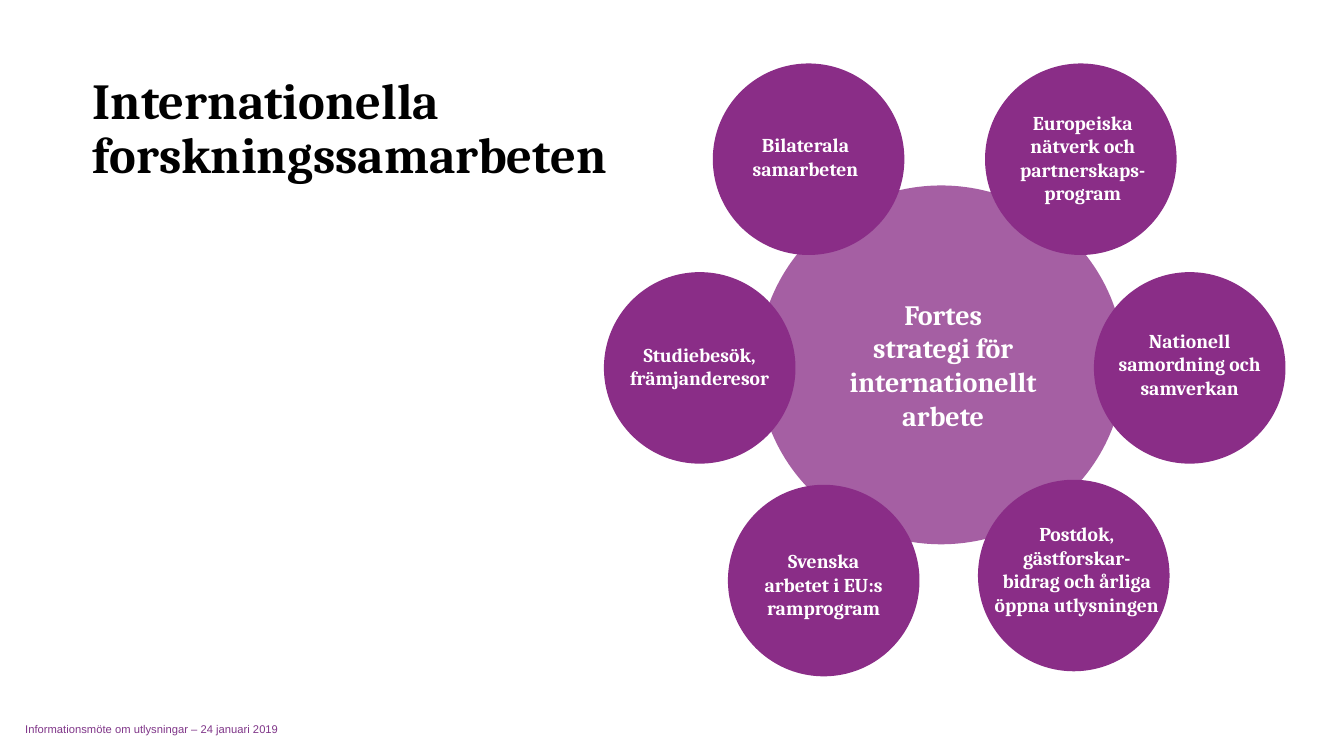
from lxml import etree
from pptx import Presentation
from pptx import util as u
from pptx.dml.color import RGBColor
from pptx.enum import shapes, text
from pptx.oxml import ns

PX = 9144
PURPLE = "8A2D87"
CIRCLE = 190
INSET = 10
SIDES = ("margin_left", "margin_top", "margin_right", "margin_bottom")

HUB_LABEL = "Fortes\nstrategi för\ninternationellt\narbete"
SATELLITES = [
    ((977, 63), (987, 105, 174, 104), "Europeiska nätverk och partnerskaps-program"),
    ((1085, 270), (1085, 321, 190, 81), "Nationell samordning och samverkan"),
    ((970, 476), (974, 513, 188, 128),
     "Postdok, gästforskar-\nbidrag och årliga öppna utlysningen"),
    ((722, 481), (722, 540, 190, 81), "Svenska\narbetet i EU:s ramprogram"),
    ((599, 270), (599, 335, 190, 57), "Studiebesök, främjanderesor"),
    ((707, 63), (707, 127, 184, 57), "Bilaterala samarbeten"),
]


def px(*lengths):
    return [u.Emu(length * PX) for length in lengths]


def color(value):
    return RGBColor.from_string(value)


def apply(target, values):
    for name, value in values.items():
        setattr(target, name, value)


def write(shape, content, size, fill, font="Cambria", bold=True, frame=None, paragraph=None):
    apply(shape.text_frame, {"word_wrap": True, **(frame or {})})
    line = shape.text_frame.paragraphs[0]
    line.text = content
    apply(line, paragraph or {})
    apply(line.font, {"name": font, "size": u.Pt(size), "bold": bold})
    line.font.color.rgb = color(fill)


def add_circle(slide, box, alpha=None):
    circle = slide.shapes.add_shape(shapes.MSO_SHAPE.OVAL, *px(*box))
    circle.shadow.inherit = False
    circle.fill.solid()
    circle.fill.fore_color.rgb = color(PURPLE)
    circle.line.fill.background()
    if alpha:
        solid = circle.fill._xPr.find(ns.qn("a:solidFill"))
        etree.SubElement(solid[0], ns.qn("a:alpha"), val=str(alpha * 1000))


def add_label(slide, box, content, size):
    label = slide.shapes.add_textbox(*px(*box))
    write(label, content, size, "FFFFFF",
          frame={"auto_size": text.MSO_AUTO_SIZE.SHAPE_TO_FIT_TEXT},
          paragraph={"alignment": text.PP_ALIGN.CENTER})


def set_title(slide, box, content):
    title = slide.shapes.title
    apply(title, dict(zip(("left", "top", "width", "height"), px(*box))))
    write(title, content, 36, "000000",
          frame={"auto_size": text.MSO_AUTO_SIZE.NONE,
                 "vertical_anchor": text.MSO_ANCHOR.TOP,
                 **dict.fromkeys(SIDES, 0)},
          paragraph={"alignment": text.PP_ALIGN.LEFT, "line_spacing": 0.9})


def add_footer(slide, box, content):
    footer = slide.shapes.add_textbox(*px(*box))
    write(footer, content, 8, "803689", font="Arial", bold=False,
          frame={"vertical_anchor": text.MSO_ANCHOR.BOTTOM, **dict.fromkeys(SIDES, 0)})


def main():
    presentation = Presentation()
    apply(presentation, dict(zip(("slide_width", "slide_height"), px(1333, 750))))
    slide = presentation.slides.add_slide(presentation.slide_layouts[5])
    set_title(slide, (92, 75, 1150, 110), "Internationella\nforskningssamarbeten")
    add_circle(slide, (752, 184, 363, 356), alpha=76)
    add_label(slide, (722, 290, 427, 145), HUB_LABEL, 20)
    for corner, label_box, content in SATELLITES:
        add_circle(slide, (*corner, CIRCLE, CIRCLE))
        add_label(slide, label_box, content, 14)
    add_footer(slide, (25, 702, 450, 28), "Informationsmöte om utlysningar – 24 januari 2019")
    presentation.save("out.pptx")


if __name__ == "__main__":
    main()
